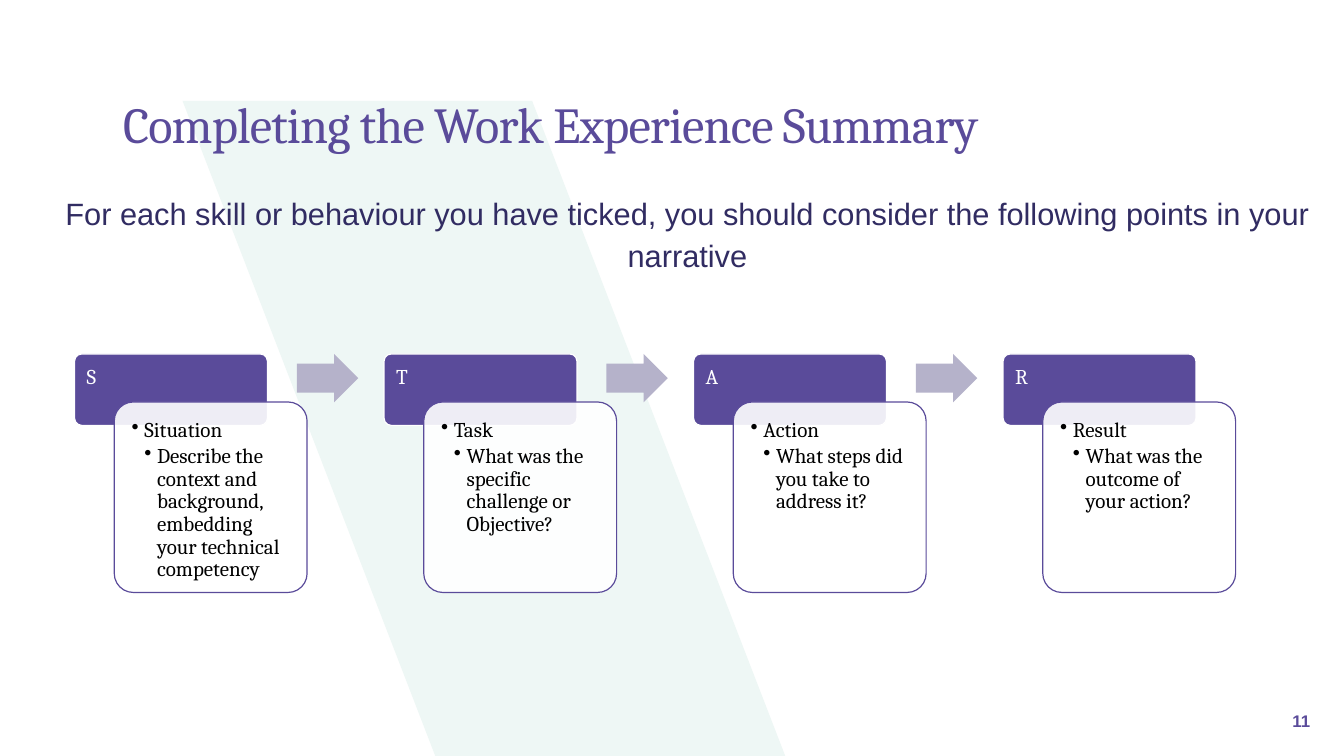
from lxml import etree
from pptx import Presentation
from pptx.dml.color import RGBColor
from pptx.enum.shapes import MSO_SHAPE as Preset
from pptx.enum.text import MSO_ANCHOR as Anchor, MSO_AUTO_SIZE as AutoSize, PP_ALIGN as Align
from pptx.oxml.ns import qn
from pptx.util import Cm, Pt

PURPLE = RGBColor(0x5A, 0x4B, 0x9A)
NAVY = RGBColor(0x31, 0x2C, 0x62)
LILAC = RGBColor(0xB5, 0xB2, 0xCA)
MINT = RGBColor(0xEE, 0xF7, 0xF5)
WHITE = RGBColor(0xFF, 0xFF, 0xFF)
BLACK = RGBColor(0, 0, 0)

STEPS = [
    ("S", "Situation", "Describe the context and background, embedding your technical competency"),
    ("T", "Task", "What was the specific challenge or Objective?"),
    ("A", "Action", "What steps did you take to address it?"),
    ("R", "Result", "What was the outcome of your action?"),
]
FIRST_LEFT, STEP_PITCH = 1.88, 7.8
HEADER_TOP, CARD_TOP = 8.92, 10.13
STEP_WIDTH = 4.86


def add_run(paragraph, text, size, font_name, color, bold=False):
    run = paragraph.add_run()
    run.text = text
    run.font.size = Pt(size)
    run.font.name = font_name
    run.font.bold = bold
    run.font.color.rgb = color
    return run


def set_frame(frame, inset=0, anchor=Anchor.TOP):
    frame.word_wrap = True
    frame.auto_size = AutoSize.NONE
    frame.vertical_anchor = anchor
    frame.margin_left = frame.margin_right = Cm(inset)
    frame.margin_top = frame.margin_bottom = Cm(inset)


def set_bullet(paragraph, indent, hanging, char=None):
    """Set the indents and the bullet; without a char the bullet is off."""
    properties = paragraph._p.get_or_add_pPr()
    properties.set("marL", str(Cm(indent)))
    properties.set("indent", str(-Cm(hanging)))
    if char:
        etree.SubElement(properties, qn("a:buChar")).set("char", char)
    else:
        etree.SubElement(properties, qn("a:buNone"))


def place(shape, left, top, width, height):
    shape.left, shape.top = Cm(left), Cm(top)
    shape.width, shape.height = Cm(width), Cm(height)


def paint(shape, fill, line=None):
    shape.shadow.inherit = False
    shape.fill.solid()
    shape.fill.fore_color.rgb = fill
    if line is None:
        shape.line.fill.background()
    else:
        shape.line.color.rgb = line
        shape.line.width = Pt(0.85)


def add_preset(slide, preset, left, top, width, height, adjustments):
    shape = slide.shapes.add_shape(preset, Cm(left), Cm(top), Cm(width), Cm(height))
    for index, value in enumerate(adjustments):
        shape.adjustments[index] = value
    return shape


def add_band(slide):
    """Draw the slanted band behind everything else."""
    builder = slide.shapes.build_freeform(Cm(13.41), Cm(2.54))
    corners = [(4.6, 2.54), (10.97, 19.05), (19.79, 19.05)]
    builder.add_line_segments([(Cm(x), Cm(y)) for x, y in corners], close=True)
    band = builder.convert_to_shape()
    paint(band, MINT)
    slide.shapes.title.element.addprevious(band.element)


def fill_title(title):
    place(title, 3.1, 2.51, 30.2, 2.82)
    set_frame(title.text_frame)
    paragraph = title.text_frame.paragraphs[0]
    paragraph.alignment = Align.LEFT
    paragraph.line_spacing = 0.9
    run = add_run(paragraph, "Completing the Work Experience Summary", 36, "Cambria", PURPLE)
    run.font._element.set("spc", "-60")


def fill_intro(body):
    place(body, 0.41, 4.78, 33.83, 11.94)
    set_frame(body.text_frame)
    paragraph = body.text_frame.paragraphs[0]
    set_bullet(paragraph, 0, 0)
    paragraph.alignment = Align.CENTER
    paragraph.line_spacing = 1.14
    paragraph.space_before = Pt(0)
    add_run(paragraph, "For each skill or behaviour you have ticked, you should consider "
            "the following points in your narrative", 22, "Arial", NAVY)


def add_header(slide, left, letter):
    header = add_preset(slide, Preset.ROUNDED_RECTANGLE, left, HEADER_TOP, STEP_WIDTH, 1.8, [0.1])
    paint(header, PURPLE, WHITE)
    set_frame(header.text_frame, 0.25)
    paragraph = header.text_frame.paragraphs[0]
    paragraph.alignment = Align.LEFT
    paragraph.line_spacing = 0.9
    add_run(paragraph, letter, 15, "Cambria", WHITE)


def add_card(slide, left, heading, question):
    card = add_preset(slide, Preset.ROUNDED_RECTANGLE, left, CARD_TOP, STEP_WIDTH, 4.8, [0.1])
    paint(card, WHITE, PURPLE)
    color = card.fill._xPr.find(qn("a:solidFill"))[0]
    etree.SubElement(color, qn("a:alpha")).set("val", "90000")
    frame = card.text_frame
    set_frame(frame, 0.3)
    for level, text in enumerate([heading, question]):
        paragraph = frame.add_paragraph() if level else frame.paragraphs[0]
        set_bullet(paragraph, 0.32 * (level + 1), 0.32, "•")
        paragraph.level = level
        paragraph.alignment = Align.LEFT
        paragraph.line_spacing = 0.9
        paragraph.space_after = Pt(2.25)
        add_run(paragraph, text, 15, "Cambria", BLACK)


def add_steps(slide):
    for index, (letter, heading, question) in enumerate(STEPS):
        left = FIRST_LEFT + index * STEP_PITCH
        if index:
            arrow = add_preset(slide, Preset.RIGHT_ARROW, left - 2.2, HEADER_TOP, 1.55, 1.22, [0.6, 0.5])
            paint(arrow, LILAC)
        add_header(slide, left, letter)
        add_card(slide, left + 1, heading, question)


def add_page_number(slide):
    number = slide.shapes.add_textbox(Cm(29.03), Cm(17.65), Cm(4.24), Cm(1.02))
    set_frame(number.text_frame, 0.25, Anchor.MIDDLE)
    paragraph = number.text_frame.paragraphs[0]
    paragraph.alignment = Align.RIGHT
    add_run(paragraph, "11", 12, "Arial", PURPLE, bold=True)


def main():
    deck = Presentation()
    deck.slide_width, deck.slide_height = Cm(33.87), Cm(19.05)
    slide = deck.slides.add_slide(deck.slide_layouts[1])
    add_band(slide)
    fill_title(slide.shapes.title)
    fill_intro(slide.placeholders[1])
    add_steps(slide)
    add_page_number(slide)
    deck.save("out.pptx")


if __name__ == "__main__":
    main()
